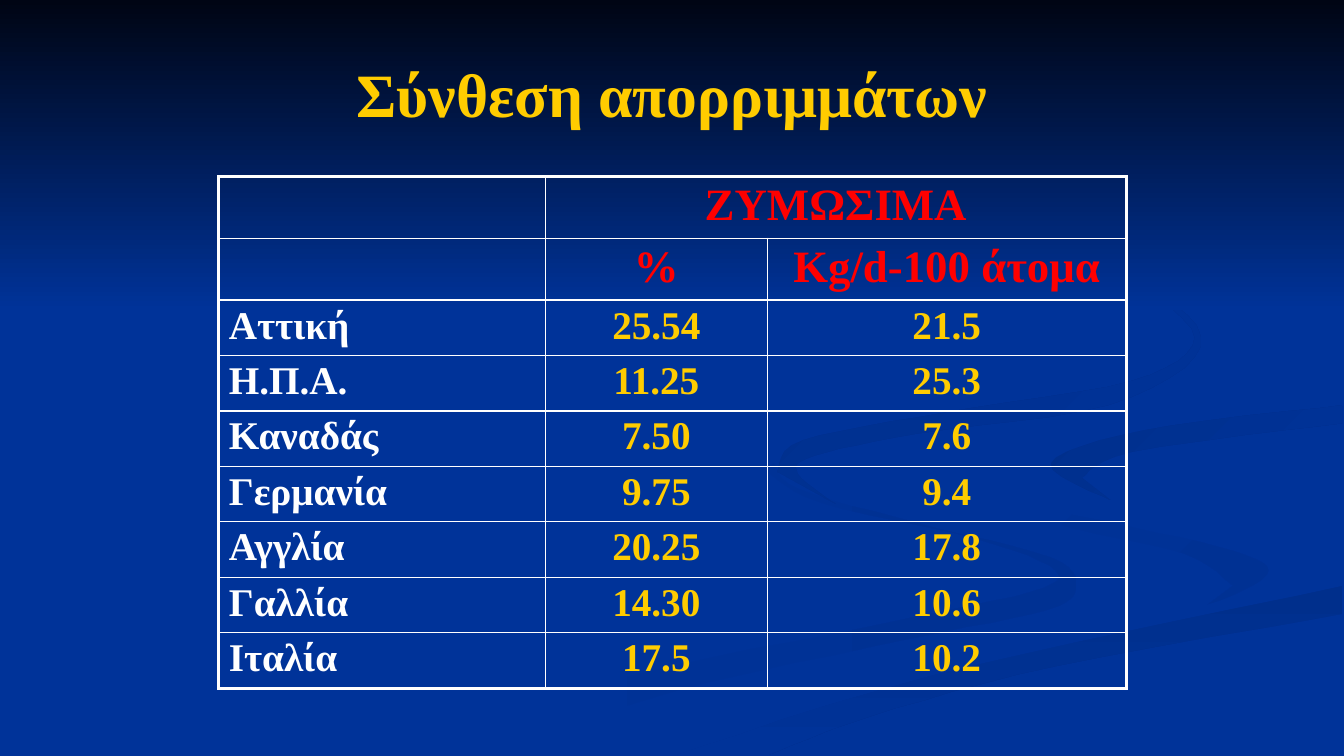
from collections import namedtuple
from dataclasses import dataclass

from lxml.etree import SubElement
from pptx import Presentation
from pptx.dml.color import RGBColor
from pptx.enum.shapes import MSO_SHAPE
from pptx.enum.text import MSO_ANCHOR, PP_ALIGN
from pptx.oxml.ns import qn
from pptx.util import Emu, Pt

PX = 9144  # 100 px to the inch
CURVE_STEPS = 6
Box = namedtuple("Box", "left top width height")
Ribbon = namedtuple("Ribbon", "first last clockwise edges")


@dataclass(frozen=True)
class Theme:
    font: str = "Times New Roman"
    ground: str = "003399"
    night: str = "000514"
    shade: str = "003193"
    deep_shade: str = "002F8C"
    gold: str = "FFCC00"
    red: str = "FF0000"
    white: str = "FFFFFF"
    title_size: int = 44
    head_size: int = 32
    body_size: int = 28
    outer_line: float = 2.25
    inner_line: float = 1


THEME = Theme()
PAGE = Box(0, 0, 1333, 750)
TITLE = Box(67, 30, 1200, 125)
TABLE = Box(217, 175, 900, 503)
COLUMNS = [324, 220, 356]
HEAD_HEIGHT, BODY_HEIGHT = 59, 55

HEADINGS = [("", "ΖΥΜΩΣΙΜΑ", ""), ("", "%", "Kg/d-100 άτομα")]
COUNTRIES = [
    ("Αττική", "25.54", "21.5"),
    ("Η.Π.Α.", "11.25", "25.3"),
    ("Καναδάς", "7.50", "7.6"),
    ("Γερμανία", "9.75", "9.4"),
    ("Αγγλία", "20.25", "17.8"),
    ("Γαλλία", "14.30", "10.6"),
    ("Ιταλία", "17.5", "10.2"),
]

RIBBONS = [
    Ribbon(THEME.ground, THEME.shade, 0, [
        [(767, 459), (792, 485), (910, 519), (1042, 553), (1067, 581),
         (1039, 605), (901, 634), (665, 687), (482, 749)],
        [(400, 749), (611, 674), (870, 620), (1023, 587), (1047, 566),
         (970, 535), (815, 499), (760, 468)]]),
    Ribbon(THEME.ground, THEME.shade, 45, [
        [(965, 464), (993, 490), (1107, 519), (1225, 547), (1257, 570), (1191, 605)],
        [(1223, 581), (1174, 549), (1041, 518), (973, 484)]]),
    Ribbon(THEME.deep_shade, THEME.ground, 90, [
        [(671, 749), (928, 669), (1331, 581)],
        [(1331, 609), (1047, 661), (865, 710), (762, 749)]]),
    Ribbon(THEME.ground, THEME.ground, 0, [
        [(636, 749), (884, 668), (1159, 611), (1257, 570), (1206, 540),
         (1012, 498), (966, 464), (1027, 427), (1332, 387)],
        [(1332, 402), (1134, 427), (1042, 463), (1131, 503), (1332, 538)],
        [(1332, 581), (928, 669), (671, 749)]]),
    Ribbon(THEME.deep_shade, THEME.ground, 45, [
        [(1331, 402), (1134, 427), (1042, 460), (1101, 496)],
        [(1073, 474), (1124, 448), (1331, 420)]]),
    Ribbon(THEME.deep_shade, THEME.ground, 45, [
        [(1017, 233), (1138, 283), (1191, 344), (1099, 402), (911, 430),
         (808, 452), (791, 470), (829, 500)],
        [(771, 468), (796, 437), (939, 409), (1122, 378), (1185, 335), (1127, 279)]]),
]


def px(length):
    return Emu(length * PX)


def emu_box(box):
    return [px(length) for length in box]


def color(code):
    return RGBColor.from_string(code)


def smooth(knots):
    """Return points of a Catmull-Rom curve through the knots."""
    padded = [knots[0], *knots, knots[-1]]
    points = [knots[0]]
    for quad in zip(padded, padded[1:], padded[2:], padded[3:]):
        for step in range(1, CURVE_STEPS + 1):
            t = step / CURVE_STEPS
            points.append(tuple(
                b + t * (c - a + t * (2 * a - 5 * b + 4 * c - d
                                      + t * (3 * b - a - 3 * c + d))) / 2
                for a, b, c, d in zip(*quad)))
    return points


def paint_gradient(shape, first, last, clockwise):
    shape.shadow.inherit = False
    shape.line.fill.background()
    shape.fill.gradient()
    shape.fill.gradient_angle = -clockwise % 360
    for stop, code in zip(shape.fill.gradient_stops, (first, last)):
        stop.color.rgb = color(code)


def write(frame, text, size, code, align):
    para = frame.paragraphs[0]
    para.alignment = align
    span = para.add_run()
    span.text = text
    span.font.name = THEME.font
    span.font.size = Pt(size)
    span.font.bold = True
    span.font.color.rgb = color(code)


def add_backdrop(page, box):
    page.background.fill.solid()
    page.background.fill.fore_color.rgb = color(THEME.ground)
    for ribbon in RIBBONS:
        start, *others = [point for edge in ribbon.edges for point in smooth(edge)]
        builder = page.shapes.build_freeform(*start, scale=PX)
        builder.add_line_segments(others, close=True)
        shape = builder.convert_to_shape(px(box.left), px(box.top))
        paint_gradient(shape, ribbon.first, ribbon.last, ribbon.clockwise)
    sky_box = box._replace(height=308)
    sky = page.shapes.add_shape(MSO_SHAPE.RECTANGLE, *emu_box(sky_box))
    paint_gradient(sky, THEME.night, THEME.ground, 90)


def add_title(page, box):
    frame = page.shapes.add_textbox(*emu_box(box)).text_frame
    frame.word_wrap = True
    frame.vertical_anchor = MSO_ANCHOR.MIDDLE
    write(frame, "Σύνθεση απορριμμάτων", THEME.title_size, THEME.gold, PP_ALIGN.CENTER)


def set_borders(cell, outer_sides):
    """Draw all four sides, heavier where the side is on the table's rim."""
    properties = cell._tc.get_or_add_tcPr()
    for position, side in enumerate("LRTB"):
        weight = THEME.outer_line if side in outer_sides else THEME.inner_line
        line = SubElement(properties, qn(f"a:ln{side}"), w=str(Pt(weight)))
        fill = SubElement(line, qn("a:solidFill"))
        SubElement(fill, qn("a:srgbClr"), val=THEME.white)
        properties.insert(position, line)


def add_waste_table(page, box):
    rows = HEADINGS + COUNTRIES
    last_row, last_column = len(rows) - 1, len(COLUMNS) - 1
    table = page.shapes.add_table(len(rows), len(COLUMNS), *emu_box(box)).table
    table.first_row = table.horz_banding = False
    table.cell(0, 1).merge(table.cell(0, last_column))
    for column, width in zip(table.columns, COLUMNS):
        column.width = px(width)
    for r, texts in enumerate(rows):
        heading = r < len(HEADINGS)
        table.rows[r].height = px(HEAD_HEIGHT if heading else BODY_HEIGHT)
        size = THEME.head_size if heading else THEME.body_size
        for c, text in enumerate(texts):
            cell = table.cell(r, c)
            cell.fill.background()
            cell.margin_top = cell.margin_bottom = px(4)
            at_right = c == last_column or cell.is_merge_origin
            rim = {"L": c == 0, "R": at_right, "T": r == 0, "B": r == last_row}
            set_borders(cell, [side for side, outer in rim.items() if outer])
            if text:
                code = THEME.red if heading else THEME.gold if c else THEME.white
                align = PP_ALIGN.CENTER if c else PP_ALIGN.LEFT
                write(cell.text_frame, text, size, code, align)


def main():
    deck = Presentation()
    deck.slide_width, deck.slide_height = px(PAGE.width), px(PAGE.height)
    page = deck.slides.add_slide(deck.slide_layouts[6])
    add_backdrop(page, PAGE)
    add_title(page, TITLE)
    add_waste_table(page, TABLE)
    deck.save("out.pptx")


if __name__ == "__main__":
    main()
